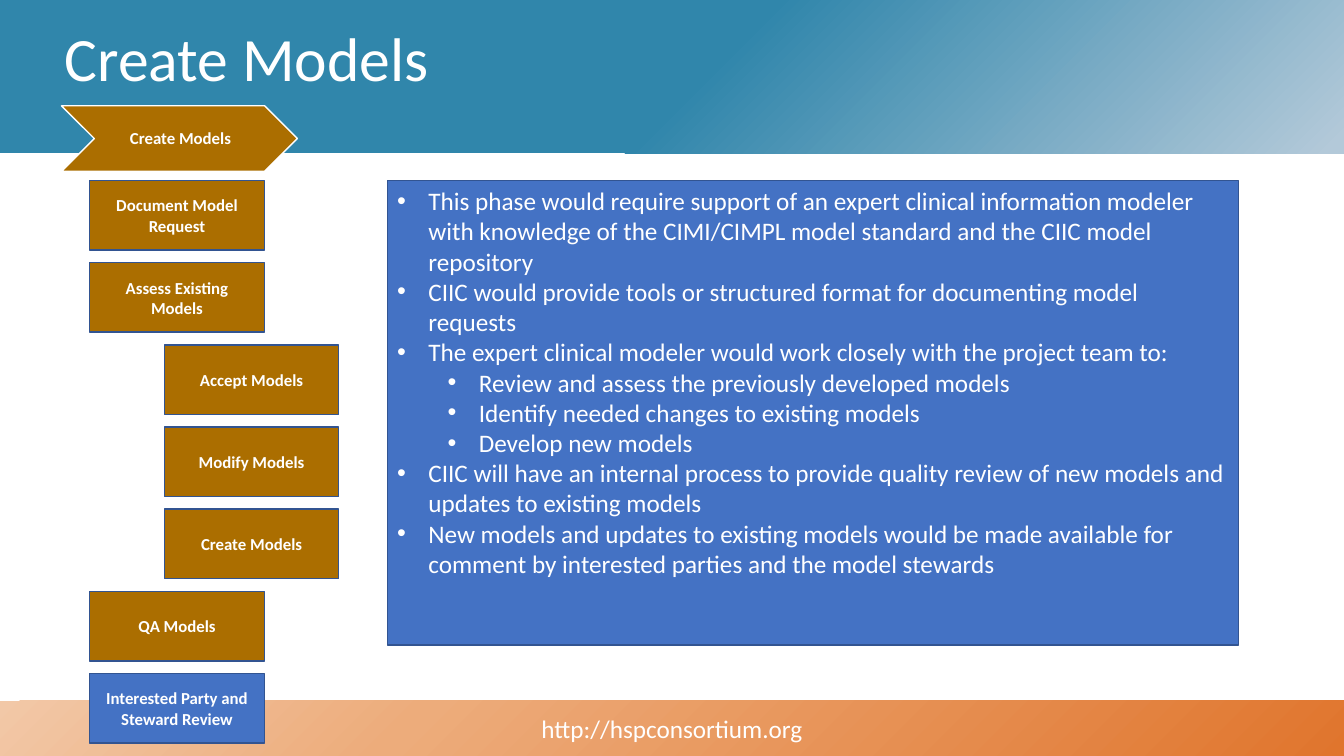
from dataclasses import dataclass
from typing import Any

from pptx import Presentation
from pptx.dml.color import RGBColor
from pptx.enum.shapes import MSO_SHAPE
from pptx.enum.text import MSO_ANCHOR, PP_ALIGN
from pptx.oxml import parse_xml
from pptx.oxml.ns import nsdecls
from pptx.util import Inches, Pt

SLIDE_WIDTH = Inches(13.33)
SLIDE_HEIGHT = Inches(7.5)


@dataclass(frozen=True)
class Theme:
    font: str = "Calibri"
    white: str = "FFFFFF"
    brown: str = "AB6E00"
    blue: str = "4472C4"
    outline: str = "325491"
    header: tuple = ((1, "B3C9D9"), (48, "3086AB"), (97, "3086AB"))
    footer: tuple = ((0, "E0752D"), (69, "EDAC7B"), (100, "F2C8A7"))
    title_size: int = 44
    body_size: int = 18
    step_size: int = 12


THEME = Theme()


@dataclass(frozen=True)
class Area:
    """Percentages of the slide's width and height."""

    left: float
    top: float
    width: float
    height: float

    def lengths(self) -> dict[str, int]:
        return {
            "left": round(SLIDE_WIDTH * self.left / 100),
            "top": round(SLIDE_HEIGHT * self.top / 100),
            "width": round(SLIDE_WIDTH * self.width / 100),
            "height": round(SLIDE_HEIGHT * self.height / 100),
        }


@dataclass(frozen=True)
class Step:
    text: str
    indent: int = 0
    fill: str = THEME.brown

    def area(self, row: int) -> Area:
        return Area(6.68 + 5.55 * self.indent, 23.87 + 10.87 * row, 12.98, 9.2)


@dataclass(frozen=True)
class Bullet:
    text: str
    level: int = 0


HEADER = Area(0, 0, 100, 20.27)
FOOTER = Area(0, 92.67, 100, 7.33)
TITLE = Area(4.05, 2.53, 86.27, 11.2)
PHASE = Area(4.58, 14, 17.55, 8.67)
PHASE_LABEL = Area(8.03, 14, 10.58, 8.67)
PANEL = Area(28.81, 23.87, 63.32, 61.47)

STEPS = (
    Step("Document Model Request"),
    Step("Assess Existing Models"),
    Step("Accept Models", indent=1),
    Step("Modify Models", indent=1),
    Step("Create Models", indent=1),
    Step("QA Models"),
    Step("Interested Party and Steward Review", fill=THEME.blue),
)

BULLETS = (
    Bullet("This phase would require support of an expert clinical information modeler "
           "with knowledge of the CIMI/CIMPL model standard and the CIIC model repository"),
    Bullet("CIIC would provide tools or structured format for documenting model requests"),
    Bullet("The expert clinical modeler would work closely with the project team to:"),
    Bullet("Review and assess the previously developed models", level=1),
    Bullet("Identify needed changes to existing models", level=1),
    Bullet("Develop new models", level=1),
    Bullet("CIIC will have an internal process to provide quality review of new models "
           "and updates to existing models"),
    Bullet("New models and updates to existing models would be made available for "
           "comment by interested parties and the model stewards"),
)


def apply_format(target: Any, values: dict[str, Any]) -> None:
    for name, value in values.items():
        setattr(target, name, value)


def format_paragraph(paragraph: Any, size: int, bold: bool = False,
                     **values: Any) -> None:
    apply_format(paragraph, values)
    apply_format(paragraph.font, {"name": THEME.font, "size": Pt(size), "bold": bold})
    paragraph.font.color.rgb = RGBColor.from_string(THEME.white)


def write_label(shape: Any, text: str, size: int, bold: bool = False,
                **values: Any) -> None:
    frame = shape.text_frame
    apply_format(frame, {"text": text, "word_wrap": True,
                         "vertical_anchor": MSO_ANCHOR.MIDDLE})
    format_paragraph(frame.paragraphs[0], size, bold, **values)


def add_block(shapes: Any, area: Area, fill: str, line: str,
              kind: MSO_SHAPE = MSO_SHAPE.RECTANGLE) -> Any:
    shape = shapes.add_shape(kind, **area.lengths())
    shape.shadow.inherit = False
    shape.fill.solid()
    shape.fill.fore_color.rgb = RGBColor.from_string(fill)
    shape.line.color.rgb = RGBColor.from_string(line)
    shape.line.width = Pt(1)
    return shape


def add_band(slide: Any, area: Area, stops: tuple) -> Any:
    shape = slide.shapes.add_shape(MSO_SHAPE.RECTANGLE, **area.lengths())
    shape.shadow.inherit = False
    shape.line.fill.background()
    colours = "".join(
        f'<a:gs pos="{position * 1000}"><a:srgbClr val="{colour}"/></a:gs>'
        for position, colour in stops)
    gradient = parse_xml(
        f'<a:gradFill {nsdecls("a")} rotWithShape="1"><a:gsLst>{colours}</a:gsLst>'
        '<a:path path="circle"><a:fillToRect l="100000" t="100000"/></a:path>'
        '</a:gradFill>')
    shape.element.spPr.prstGeom.addnext(gradient)
    slide.shapes.title.element.addprevious(shape.element)
    return shape


def add_phase(slide: Any, text: str) -> None:
    group = slide.shapes.add_group_shape()
    add_block(group.shapes, PHASE, THEME.brown, THEME.white, MSO_SHAPE.CHEVRON)
    label = group.shapes.add_textbox(**PHASE_LABEL.lengths())
    apply_format(label.text_frame, {
        "margin_left": Inches(0.04), "margin_top": Inches(0.01),
        "margin_right": Inches(0.01), "margin_bottom": Inches(0.01)})
    write_label(label, text, THEME.step_size, bold=True,
                alignment=PP_ALIGN.CENTER, line_spacing=0.9)


def add_panel(slide: Any) -> None:
    panel = add_block(slide.shapes, PANEL, THEME.blue, THEME.outline)
    frame = panel.text_frame
    apply_format(frame, {"text": "\n".join(bullet.text for bullet in BULLETS),
                         "word_wrap": True, "vertical_anchor": MSO_ANCHOR.TOP})
    for paragraph, bullet in zip(frame.paragraphs, BULLETS):
        properties = paragraph._p.get_or_add_pPr()
        properties.set("marL", str(Inches(0.31 + 0.5 * bullet.level)))
        properties.set("indent", str(Inches(-0.31)))
        properties.append(parse_xml(f'<a:buFont {nsdecls("a")} typeface="Arial"/>'))
        properties.append(parse_xml(f'<a:buChar {nsdecls("a")} char="•"/>'))
        format_paragraph(paragraph, THEME.body_size, level=bullet.level,
                         alignment=PP_ALIGN.LEFT)


def main() -> None:
    presentation = Presentation()
    apply_format(presentation, {"slide_width": SLIDE_WIDTH, "slide_height": SLIDE_HEIGHT})
    slide = presentation.slides.add_slide(presentation.slide_layouts[5])

    add_band(slide, HEADER, THEME.header)
    footer = add_band(slide, FOOTER, THEME.footer)
    write_label(footer, "http://hspconsortium.org", THEME.body_size,
                alignment=PP_ALIGN.CENTER)

    title = slide.shapes.title
    apply_format(title, TITLE.lengths())
    write_label(title, "Create Models", THEME.title_size,
                alignment=PP_ALIGN.LEFT, line_spacing=0.9)

    for row, step in enumerate(STEPS):
        block = add_block(slide.shapes, step.area(row), step.fill, THEME.outline)
        write_label(block, step.text, THEME.step_size, bold=True,
                    alignment=PP_ALIGN.CENTER)

    add_phase(slide, "Create Models")
    add_panel(slide)
    presentation.save("out.pptx")


if __name__ == "__main__":
    main()
